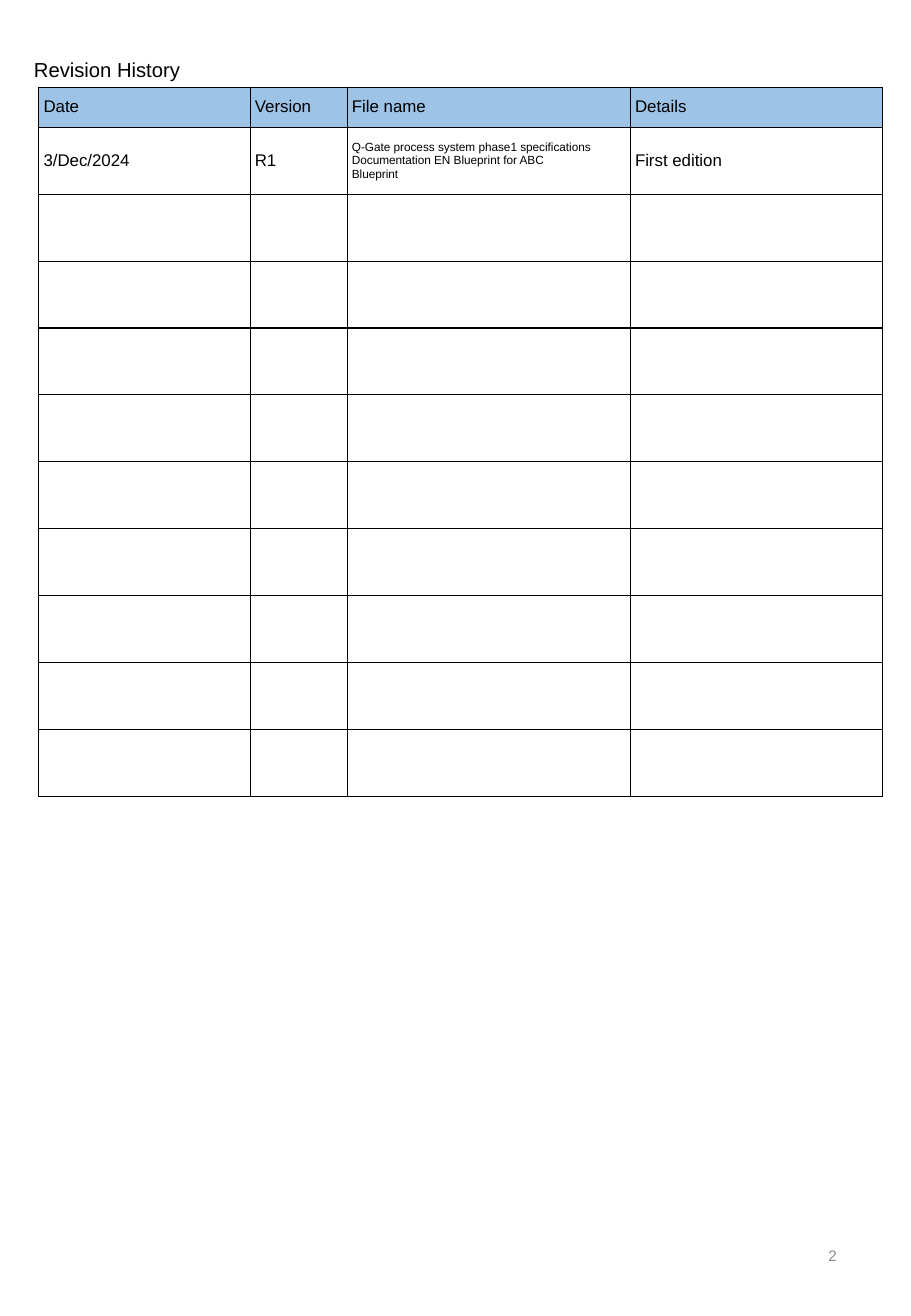
from dataclasses import dataclass

from lxml import etree
from pptx import Presentation
from pptx import util as u
from pptx.dml.color import RGBColor
from pptx.enum import text
from pptx.oxml import ns


@dataclass(frozen=True)
class Theme:
    font: str = "Arial"
    ink: str = "000000"
    header: str = "9DC3E6"
    muted: str = "8C8C8C"
    title: float = 12
    body: float = 10
    small: float = 7
    number: float = 9
    border: float = 0.75


THEME = Theme()
COLUMNS = [
    ("Date", 4.42),
    ("Version", 2.03),
    ("File name", 5.92),
    ("Details", 5.28),
]
FILE_COLUMN = 2
FILE_NAME = """Q-Gate process system phase1 specifications
Documentation EN Blueprint for ABC
Blueprint"""
FIRST_REVISION = ["3/Dec/2024", "R1", FILE_NAME, "First edition"]
EMPTY_ROWS = 9
HEADER_HEIGHT = 0.84
ROW_HEIGHT = 1.4


def write(frame, words, size, color=THEME.ink, align=text.PP_ALIGN.LEFT):
    frame.text = words
    for paragraph in frame.paragraphs:
        paragraph.alignment = align
        paragraph.font.name = THEME.font
        paragraph.font.size = u.Pt(size)
        paragraph.font.color.rgb = RGBColor.from_string(color)


def place(box, left, top, width, height):
    box.left, box.top = u.Cm(left), u.Cm(top)
    box.width, box.height = u.Cm(width), u.Cm(height)


def add_title(slide):
    title = slide.shapes.title
    place(title, 0.3, 1.07, 3.96, 0.76)
    frame = title.text_frame
    write(frame, "Revision History", THEME.title)
    frame.auto_size = text.MSO_AUTO_SIZE.NONE
    frame.vertical_anchor = text.MSO_ANCHOR.MIDDLE
    frame.word_wrap = True
    frame.margin_left = u.Cm(0.41)


def add_borders(cell):
    properties = cell._tc.get_or_add_tcPr()
    for side in ("a:lnL", "a:lnR", "a:lnT", "a:lnB"):
        border = etree.SubElement(properties, ns.qn(side), w=str(u.Pt(THEME.border)))
        fill = etree.SubElement(border, ns.qn("a:solidFill"))
        etree.SubElement(fill, ns.qn("a:srgbClr"), val=THEME.ink)


def format_cell(cell, words, size, is_header):
    add_borders(cell)
    if is_header:
        cell.fill.solid()
        cell.fill.fore_color.rgb = RGBColor.from_string(THEME.header)
    else:
        cell.fill.background()
    cell.margin_left = u.Cm(0.1)
    cell.vertical_anchor = text.MSO_ANCHOR.MIDDLE
    write(cell.text_frame, words, size)


def add_revisions(slide):
    headings = [heading for heading, _ in COLUMNS]
    entries = [headings, FIRST_REVISION] + [[""] * len(COLUMNS)] * EMPTY_ROWS
    revisions = slide.shapes.add_table(
        len(entries), len(COLUMNS), u.Cm(0.81), u.Cm(1.82),
        u.Cm(sum(width for _, width in COLUMNS)),
        u.Cm(HEADER_HEIGHT + ROW_HEIGHT * (len(entries) - 1)),
    ).table
    revisions.first_row = revisions.horz_banding = False
    for column, (_, width) in zip(revisions.columns, COLUMNS):
        column.width = u.Cm(width)
    for r, entry in enumerate(entries):
        is_header = r == 0
        revisions.rows[r].height = u.Cm(HEADER_HEIGHT if is_header else ROW_HEIGHT)
        for c, words in enumerate(entry):
            is_file = c == FILE_COLUMN and not is_header
            size = THEME.small if is_file else THEME.body
            format_cell(revisions.cell(r, c), words, size, is_header)


def add_page_number(slide, number):
    box = slide.shapes.add_textbox(u.Cm(13.46), u.Cm(25.5), u.Cm(4.29), u.Cm(1.47))
    frame = box.text_frame
    frame.word_wrap = True
    frame.vertical_anchor = text.MSO_ANCHOR.MIDDLE
    write(frame, str(number), THEME.number, THEME.muted, text.PP_ALIGN.RIGHT)


def main():
    deck = Presentation()
    deck.slide_width, deck.slide_height = u.Cm(19.05), u.Cm(27.51)
    slide = deck.slides.add_slide(deck.slide_layouts.get_by_name("Title Only"))
    add_title(slide)
    add_revisions(slide)
    add_page_number(slide, 2)
    deck.save("out.pptx")


if __name__ == "__main__":
    main()
